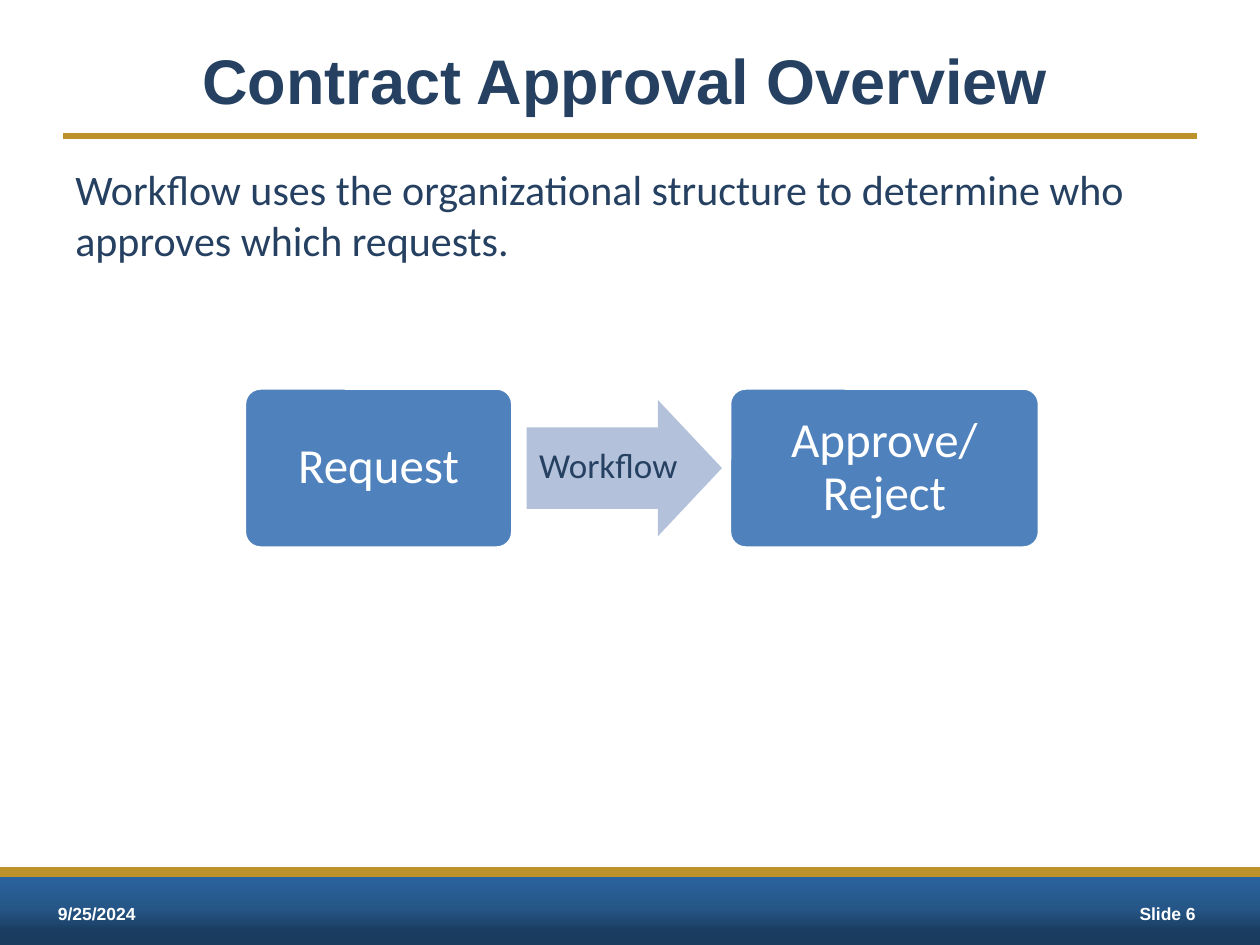
from copy import deepcopy

from lxml import etree
from pptx import Presentation
from pptx.dml.color import RGBColor
from pptx.enum.shapes import MSO_CONNECTOR, MSO_SHAPE
from pptx.enum.text import MSO_ANCHOR, PP_ALIGN
from pptx.oxml.ns import qn
from pptx.util import Inches, Pt

STRAIGHT = MSO_CONNECTOR.STRAIGHT
RECTANGLE, ROUNDED, ARROW = MSO_SHAPE.RECTANGLE, MSO_SHAPE.ROUNDED_RECTANGLE, MSO_SHAPE.RIGHT_ARROW
TOP, MIDDLE = MSO_ANCHOR.TOP, MSO_ANCHOR.MIDDLE
LEFT, CENTER = PP_ALIGN.LEFT, PP_ALIGN.CENTER

THEME = {
    "navy": RGBColor.from_string("254061"),
    "gold": RGBColor.from_string("BD922A"),
    "box": RGBColor.from_string("4F81BD"),
    "arrow": RGBColor.from_string("B3C1DB"),
    "white": RGBColor.from_string("FFFFFF"),
    "band": [(0.18, "1A3C5F"), (0.5, "255687"), (1, "2B66A1")],
    "heading_font": "Arial", "body_font": "Calibri",
    "title": 36, "body": 24, "step": 28, "label": 20, "footer": 10,
}
WIDTH, HEIGHT = 10, 7.5
MARGIN = WIDTH / 20
BAND_TOP = 6.92


def write(shape, text, size, color, font, bold=False, align=LEFT, anchor=TOP):
    frame = shape.text_frame
    frame.word_wrap = True
    frame.vertical_anchor = anchor
    frame.text = text
    paragraph = frame.paragraphs[0]
    paragraph.alignment = align
    for run in paragraph.runs:
        run.font.size = Pt(THEME[size])
        run.font.name = THEME[font]
        run.font.color.rgb = THEME[color]
        run.font.bold = bold
    return paragraph


def add_rule(left, right, top, weight):
    rule = slide.shapes.add_connector(STRAIGHT, Inches(left), Inches(top), Inches(right), Inches(top))
    rule.line.color.rgb = THEME["gold"]
    rule.line.width = Pt(weight)
    etree.SubElement(rule._element.spPr, qn("a:effectLst"))
    return rule


presentation = Presentation()
presentation.slide_width, presentation.slide_height = Inches(WIDTH), Inches(HEIGHT)
slide = presentation.slides.add_slide(presentation.slide_layouts[5])

# Double rule under the title
title_rule = add_rule(MARGIN, WIDTH - MARGIN, 1.08, 3)
title_rule._element.spPr.find(qn("a:ln")).set("cmpd", "dbl")

# Footer band, dark at the bottom
band = slide.shapes.add_shape(RECTANGLE, 0, Inches(BAND_TOP), Inches(WIDTH), Inches(HEIGHT - BAND_TOP))
band.shadow.inherit = False
band.line.fill.background()
band.fill.gradient()
band.fill.gradient_angle = 90
stop_list = band._element.spPr.find(".//" + qn("a:gsLst"))
stop_list.append(deepcopy(stop_list[-1]))
for stop, (position, color) in zip(band.fill.gradient_stops, THEME["band"]):
    stop.position = position
    stop.color.rgb = RGBColor.from_string(color)
add_rule(0, WIDTH, BAND_TOP, 6)

# Date and slide number, parted by a right tab
footer = slide.shapes.add_textbox(Inches(0.25), Inches(7.04), Inches(9.58), Inches(0.42))
footer.text_frame.margin_left = Inches(0.21)
paragraph = write(footer, "9/25/2024\tSlide 6", "footer", "white", "heading_font", True, anchor=MIDDLE)
tab_list = etree.SubElement(paragraph._p.get_or_add_pPr(), qn("a:tabLst"))
etree.SubElement(tab_list, qn("a:tab"), pos=str(Inches(9.03)), algn="r")

# Title
title = slide.shapes.title
title.left, title.top, title.width, title.height = map(Inches, (MARGIN, 0.17, 8.92, 0.92))
title.line.color.rgb = THEME["white"]
title.line.width = Pt(0.75)
write(title, "Contract Approval Overview", "title", "navy", "heading_font", True, CENTER, MIDDLE)

# Introduction
body = slide.shapes.add_textbox(Inches(MARGIN), Inches(1.25), Inches(WIDTH - 2 * MARGIN), Inches(5.29))
write(body, "Workflow uses the organizational structure to determine who approves which requests.",
      "body", "navy", "body_font")

# Steps of the process
FLOW_TOP, FLOW_HEIGHT, ARROW_HEIGHT = 3.08, 1.27, 1.08
for text, left, width in [("Request", 1.94, 2.13), ("Approve/\vReject", 5.79, 2.46)]:
    step = slide.shapes.add_shape(ROUNDED, Inches(left), Inches(FLOW_TOP), Inches(width), Inches(FLOW_HEIGHT))
    step.shadow.inherit = False
    step.adjustments[0] = 0.1
    step.fill.solid()
    step.fill.fore_color.rgb = THEME["box"]
    step.line.color.rgb = THEME["white"]
    step.line.width = Pt(2)
    paragraph = write(step, text, "step", "white", "body_font", align=CENTER, anchor=MIDDLE)
    paragraph.line_spacing = 0.9

# Arrow between the steps, with its label
arrow = slide.shapes.add_shape(ARROW, Inches(4.18), Inches(FLOW_TOP + (FLOW_HEIGHT - ARROW_HEIGHT) / 2),
                               Inches(1.55), Inches(ARROW_HEIGHT))
arrow.shadow.inherit = False
arrow.adjustments[0], arrow.adjustments[1] = 0.6, 0.47
arrow.fill.solid()
arrow.fill.fore_color.rgb = THEME["arrow"]
arrow.line.fill.background()
label = slide.shapes.add_textbox(Inches(4.18), Inches(3.47), Inches(1.48), Inches(0.51))
write(label, "Workflow", "label", "navy", "body_font")

presentation.save("out.pptx")
